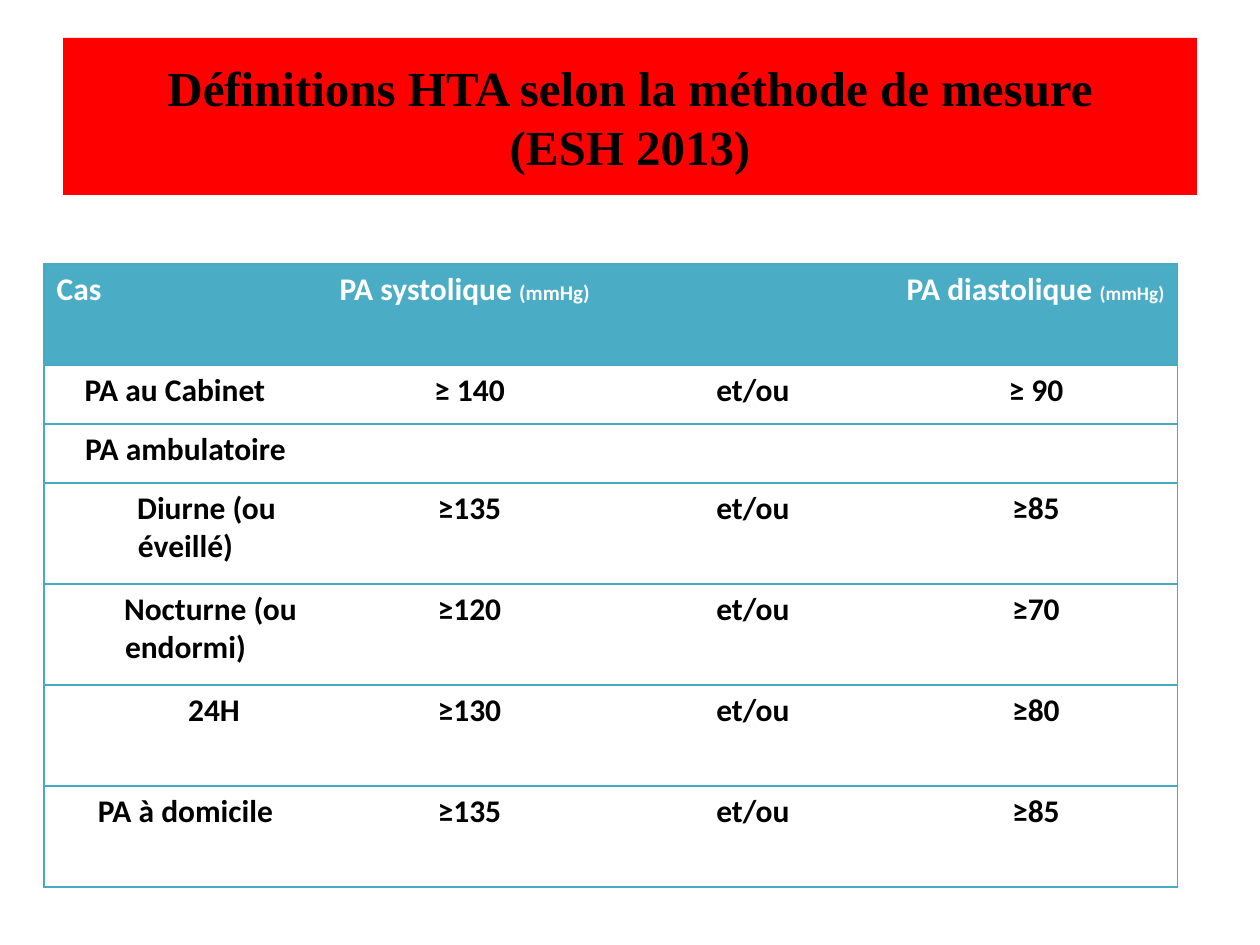
from lxml.etree import SubElement
from pptx import Presentation
from pptx.dml.color import RGBColor
from pptx.enum.text import MSO_ANCHOR, MSO_AUTO_SIZE, PP_ALIGN as Align
from pptx.oxml.ns import qn
from pptx.util import Pt

EMU_PER_PX = 914400 / 126
BLACK = RGBColor(0, 0, 0)
WHITE = RGBColor(255, 255, 255)
RED = RGBColor(255, 0, 0)
TEAL = RGBColor(0x4B, 0xAC, 0xC6)
RULE = RGBColor(0x46, 0xAA, 0xC5)

COLUMN_WIDTHS = [283, 285, 282, 284]
ROW_HEIGHTS = [101, 59, 59, 101, 101, 101, 101]
UNIT = "(mmHg)"
HEADINGS = [
    [("Cas", 18)],
    [("PA systolique ", 18), (UNIT, 12)],
    [],
    [("PA diastolique ", 18), (UNIT, 11)],
]
CASES = [
    ("PA au Cabinet", 28, Align.LEFT, "≥ 140", "≥ 90"),
    ("PA ambulatoire", 0, Align.CENTER, "", ""),
    ("Diurne (ou éveillé)", 42, Align.CENTER, "≥135", "≥85"),
    ("Nocturne (ou endormi)", 50, Align.CENTER, "≥120", "≥70"),
    ("24H", 57, Align.CENTER, "≥130", "≥80"),
    ("PA à domicile", 0, Align.CENTER, "≥135", "≥85"),
]


def px(length):
    return round(length * EMU_PER_PX)


def write(frame, pieces, font="Calibri", color=BLACK, align=Align.LEFT, indent=0):
    paragraph = frame.paragraphs[0]
    paragraph.alignment = align
    if indent:
        paragraph._p.get_or_add_pPr().set("indent", str(px(indent)))
    for words, size in pieces:
        for number, line in enumerate(words.split("\n")):
            if number:
                paragraph.add_line_break()
            run = paragraph.add_run()
            run.text = line
            run.font.name = font
            run.font.size = Pt(size)
            run.font.bold = True
            run.font.color.rgb = color


def draw_borders(cell, visible_sides):
    properties = cell._tc.get_or_add_tcPr()
    for position, side in enumerate("LRTB"):
        border = SubElement(properties, qn(f"a:ln{side}"), w=str(Pt(0.75)))
        if side in visible_sides:
            fill = SubElement(border, qn("a:solidFill"))
            SubElement(fill, qn("a:srgbClr"), val=str(RULE))
        else:
            SubElement(border, qn("a:noFill"))
        properties.insert(position, border)


def add_title(slide):
    title = slide.shapes.title
    title.left, title.top, title.width, title.height = map(px, (63, 38, 1134, 157))
    title.fill.solid()
    title.fill.fore_color.rgb = RED
    frame = title.text_frame
    frame.auto_size = MSO_AUTO_SIZE.NONE
    frame.vertical_anchor = MSO_ANCHOR.MIDDLE
    write(frame, [("Définitions HTA selon la méthode de mesure\n(ESH 2013)", 28)],
          font="Times New Roman", align=Align.CENTER)


def add_grid(slide):
    grid = slide.shapes.add_table(
        len(ROW_HEIGHTS), len(COLUMN_WIDTHS), px(44), px(264),
        px(sum(COLUMN_WIDTHS)), px(sum(ROW_HEIGHTS))).table
    grid.horz_banding = False
    for column, width in zip(grid.columns, COLUMN_WIDTHS):
        column.width = px(width)
    for row, height in zip(grid.rows, ROW_HEIGHTS):
        row.height = px(height)
    last = len(COLUMN_WIDTHS) - 1
    for row_number, row in enumerate(grid.rows):
        for column_number, cell in enumerate(row.cells):
            if row_number == 0:
                cell.fill.solid()
                cell.fill.fore_color.rgb = TEAL
            else:
                cell.fill.background()
            outer = {0: "L", last: "R"}.get(column_number, "")
            draw_borders(cell, "TB" + outer)
    return grid


def fill_grid(grid):
    for column, heading in enumerate(HEADINGS):
        write(grid.cell(0, column).text_frame, heading, color=WHITE)
    for row, (case, indent, align, systolic, diastolic) in enumerate(CASES, 1):
        write(grid.cell(row, 0).text_frame, [(case, 18)], align=align, indent=indent)
        if systolic:
            for column, words in enumerate((systolic, "et/ou", diastolic), 1):
                write(grid.cell(row, column).text_frame, [(words, 18)],
                      align=Align.CENTER)


def main():
    deck = Presentation()
    deck.slide_width, deck.slide_height = px(1260), px(945)
    slide = deck.slides.add_slide(deck.slide_layouts[5])
    add_title(slide)
    fill_grid(add_grid(slide))
    deck.save("out.pptx")


if __name__ == "__main__":
    main()
